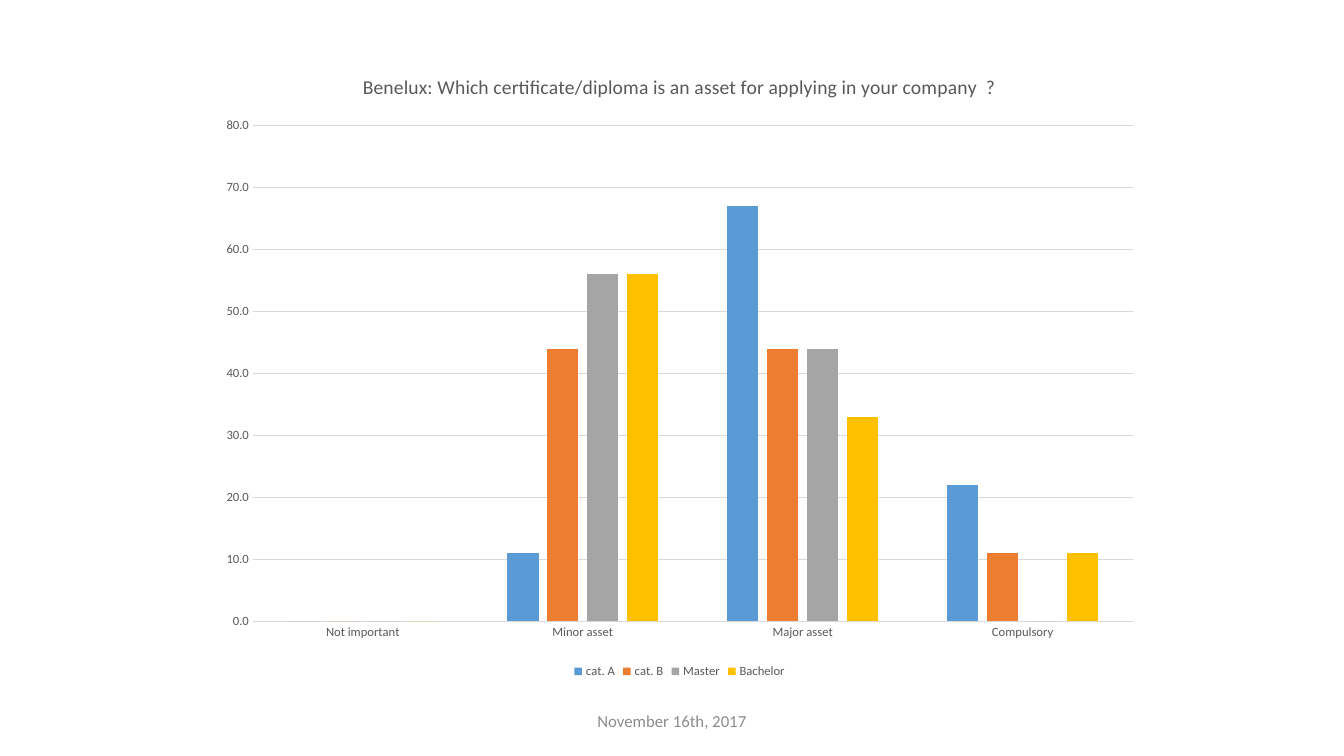
from pptx import Presentation
from pptx.chart.data import CategoryChartData
from pptx.dml.color import RGBColor
from pptx.enum.chart import XL_CHART_TYPE, XL_LEGEND_POSITION, XL_TICK_MARK
from pptx.enum.text import MSO_ANCHOR, PP_ALIGN
from pptx.util import Pt

COLUMNS = XL_CHART_TYPE.COLUMN_CLUSTERED
BOTTOM = XL_LEGEND_POSITION.BOTTOM
NO_TICK = XL_TICK_MARK.NONE
MIDDLE, CENTER = MSO_ANCHOR.MIDDLE, PP_ALIGN.CENTER

# Content
TITLE = "Benelux: Which certificate/diploma is an asset for applying in your company  ?"
DATE = "November 16th, 2017"
ANSWERS = ["Not important", "Minor asset", "Major asset", "Compulsory"]
DIPLOMAS = {
    "cat. A": (0, 11, 67, 22),
    "cat. B": (0, 44, 44, 11),
    "Master": (0, 56, 44, 0),
    "Bachelor": (0, 56, 33, 11),
}

# Theme and layout, in points
THEME = {
    "font": "Calibri",
    "title": 14, "date": 12, "label": 9,
    "text": "595959", "muted": "8C8C8C", "grid": "D9D9D9", "rule": 0.75,
    "series": ("5B9BD5", "ED7D31", "A5A5A5", "FFC000"),
}
SLIDE_W, SLIDE_H = 960, 540
CHART_BOX = (148.3, 37, 674.2, 450.7)
DATE_BOX = (318, 500.5, 324, 28.75)


def rgb(name):
    return RGBColor.from_string(THEME[name])


def style_font(font, size, color="text"):
    values = {"name": THEME["font"], "size": Pt(THEME[size]), "bold": False}
    for key, value in values.items():
        setattr(font, key, value)
    font.color.rgb = rgb(color)


def style_rule(line):
    line.color.rgb = rgb("grid")
    line.width = Pt(THEME["rule"])


prs = Presentation()
prs.slide_width, prs.slide_height = Pt(SLIDE_W), Pt(SLIDE_H)
s = prs.slides.add_slide(prs.slide_layouts[6])

# Chart
data = CategoryChartData(number_format="0.0")
data.categories = ANSWERS
for name, values in DIPLOMAS.items():
    data.add_series(name, values)
chart = s.shapes.add_chart(COLUMNS, *map(Pt, CHART_BOX), data).chart
style_font(chart.font, "label")

# Chart title and legend
p = chart.chart_title.text_frame.paragraphs[0]
r = p.add_run()
r.text = TITLE
style_font(r.font, "title")
chart.chart_title.include_in_layout = False
chart.has_legend = True
chart.legend.position = BOTTOM
chart.legend.include_in_layout = False
style_font(chart.legend.font, "label")

# Columns
plot = chart.plots[0]
for key, value in {"gap_width": 219, "overlap": -27, "vary_by_categories": False}.items():
    setattr(plot, key, value)
for series, color in zip(plot.series, THEME["series"]):
    series.format.fill.solid()
    series.format.fill.fore_color.rgb = RGBColor.from_string(color)

# Axes
for axis in (chart.category_axis, chart.value_axis):
    axis.major_tick_mark = axis.minor_tick_mark = NO_TICK
    style_font(axis.tick_labels.font, "label")
style_rule(chart.category_axis.format.line)
scale = chart.value_axis
for key, value in {"minimum_scale": 0, "maximum_scale": 80, "major_unit": 10}.items():
    setattr(scale, key, value)
scale.format.line.fill.background()
style_rule(scale.major_gridlines.format.line)
scale.tick_labels.number_format = "0.0"
scale.tick_labels.number_format_is_linked = False

# Date
tf = s.shapes.add_textbox(*map(Pt, DATE_BOX)).text_frame
tf.word_wrap = True
tf.vertical_anchor = MIDDLE
p = tf.paragraphs[0]
p.alignment = CENTER
r = p.add_run()
r.text = DATE
style_font(r.font, "date", "muted")

prs.save("out.pptx")
